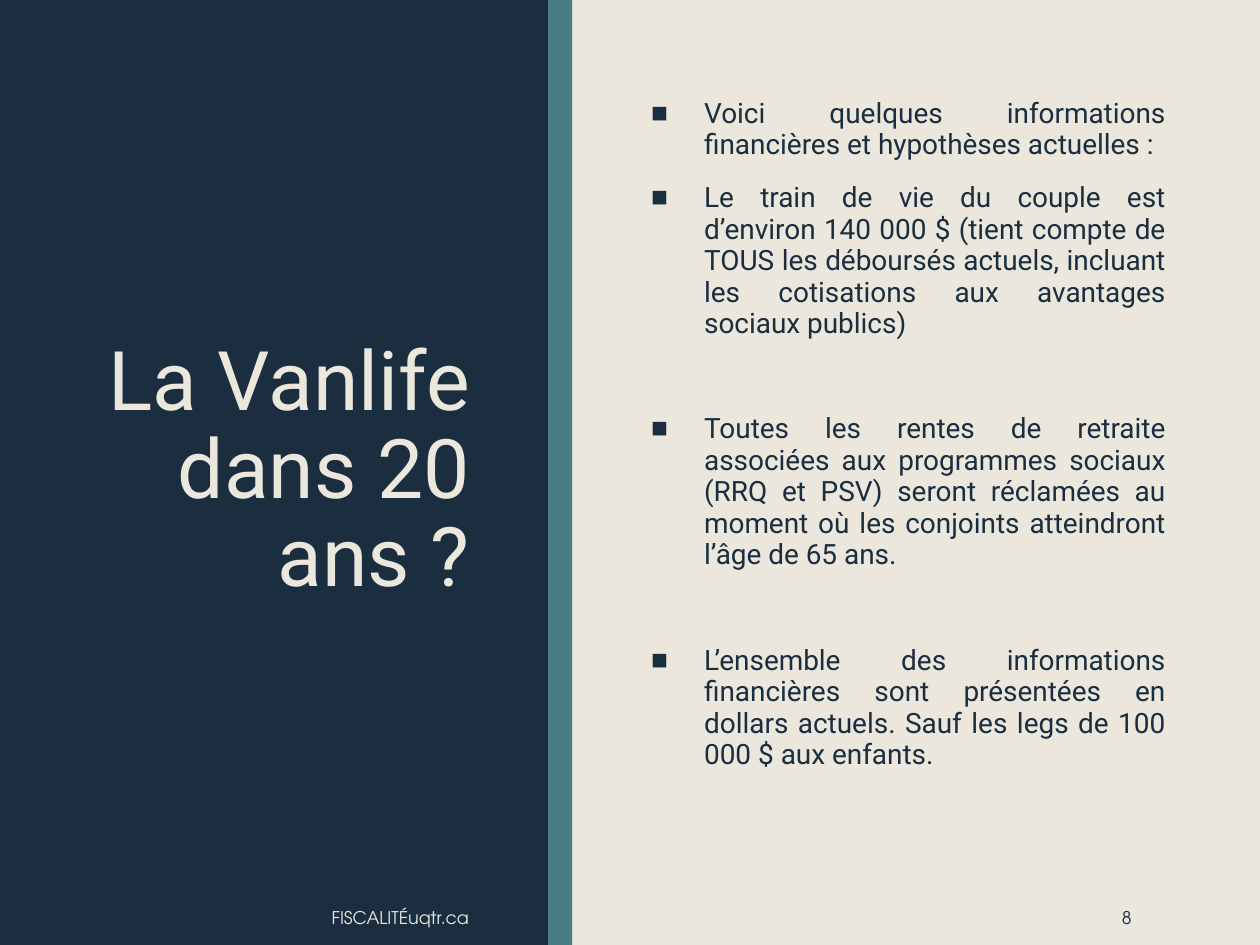
from typing import NamedTuple

from lxml.etree import SubElement
from pptx import Presentation
from pptx.dml.color import RGBColor
from pptx.enum.shapes import MSO_SHAPE
from pptx.enum.text import MSO_ANCHOR, MSO_AUTO_SIZE, PP_ALIGN
from pptx.oxml.ns import qn
from pptx.util import Inches, Pt

NAVY, TEAL, CREAM = "1A2E40", "4A7C85", "EBE7DD"
SANS, GEO = "Roboto", "TeX Gyre Adventor"
HIGH = 7.5
INDENT = Inches(0.42)


class Band(NamedTuple):
    left: float
    width: float
    color: str


class Note(NamedTuple):
    left: float
    width: float
    text: str
    color: str


class Point(NamedTuple):
    text: str
    before: int


BANDS = [Band(0, 4.35, NAVY), Band(4.35, 0.19, TEAL)]
NOTES = [Note(0.25, 3.57, "FISCALITÉuqtr.ca", CREAM), Note(7.77, 1.31, "8", NAVY)]
POINTS = [
    Point("Voici quelques informations financières et hypothèses actuelles :", 0),
    Point("Le train de vie du couple est d’environ 140 000 $ (tient compte de TOUS "
          "les déboursés actuels, incluant les cotisations aux avantages sociaux "
          "publics)", 10),
    Point("Toutes les rentes de retraite associées aux programmes sociaux (RRQ et "
          "PSV) seront réclamées au moment où les conjoints atteindront l’âge de "
          "65 ans.", 40),
    Point("L’ensemble des informations financières sont présentées en dollars "
          "actuels. Sauf les legs de 100 000 $ aux enfants.", 40),
]


def paint(target, color: str) -> None:
    """Give a fill or a font a solid hex colour."""
    if hasattr(target, "solid"):
        target.solid()
        target.fore_color.rgb = RGBColor.from_string(color)
    else:
        target.color.rgb = RGBColor.from_string(color)


def add_run(para, text: str, size: int, face: str, color: str) -> None:
    run = para.add_run()
    run.text = text
    run.font.size = Pt(size)
    run.font.name = face
    paint(run.font, color)


def set_frame(shape, anchor):
    frame = shape.text_frame
    frame.word_wrap = True
    frame.auto_size = MSO_AUTO_SIZE.NONE
    frame.vertical_anchor = anchor
    return frame


def add_band(slide, band: Band):
    shape = slide.shapes.add_shape(MSO_SHAPE.RECTANGLE, Inches(band.left), 0,
                                   Inches(band.width), Inches(HIGH))
    shape.shadow.inherit = False
    paint(shape.fill, band.color)
    shape.line.fill.background()


def set_title(slide, text: str) -> None:
    title = slide.shapes.title
    title.left, title.top = Inches(0.53), Inches(0.87)
    title.width, title.height = Inches(3.3), Inches(5.76)
    para = set_frame(title, MSO_ANCHOR.MIDDLE).paragraphs[0]
    para.alignment = PP_ALIGN.RIGHT
    para.line_spacing = 0.89
    add_run(para, text, 47, SANS, CREAM)
    # Bring the title in front of the bands.
    slide.shapes[-1].element.addnext(title.element)


def add_note(slide, note: Note) -> None:
    box = slide.shapes.add_textbox(Inches(note.left), Inches(7.06),
                                   Inches(note.width), Inches(0.44))
    para = set_frame(box, MSO_ANCHOR.MIDDLE).paragraphs[0]
    para.alignment = PP_ALIGN.RIGHT
    para.space_after = Pt(6)
    add_run(para, note.text, 10, GEO, note.color)


def add_bullet(para) -> None:
    props = para._p.get_or_add_pPr()
    props.set("marL", str(INDENT))
    props.set("indent", str(-INDENT))
    SubElement(props, qn("a:buFont"), typeface="Arial")
    SubElement(props, qn("a:buChar"), char="■")


def add_points(slide, points: list[Point]) -> None:
    box = slide.shapes.add_textbox(Inches(5.07), Inches(0.73),
                                   Inches(4.28), Inches(5.6))
    frame = set_frame(box, MSO_ANCHOR.TOP)
    for i, point in enumerate(points):
        para = frame.add_paragraph() if i else frame.paragraphs[0]
        add_bullet(para)
        para.alignment = PP_ALIGN.JUSTIFY
        para.line_spacing = 0.94
        para.space_before = Pt(point.before)
        para.space_after = Pt(2)
        add_run(para, point.text, 16, SANS, NAVY)


def main() -> None:
    deck = Presentation()
    deck.slide_width, deck.slide_height = Inches(10), Inches(HIGH)
    slide = deck.slides.add_slide(deck.slide_layouts[5])
    paint(slide.background.fill, CREAM)
    for band in BANDS:
        add_band(slide, band)
    set_title(slide, "La Vanlife dans 20 ans ?")
    add_points(slide, POINTS)
    for note in NOTES:
        add_note(slide, note)
    deck.save("out.pptx")


if __name__ == "__main__":
    main()
